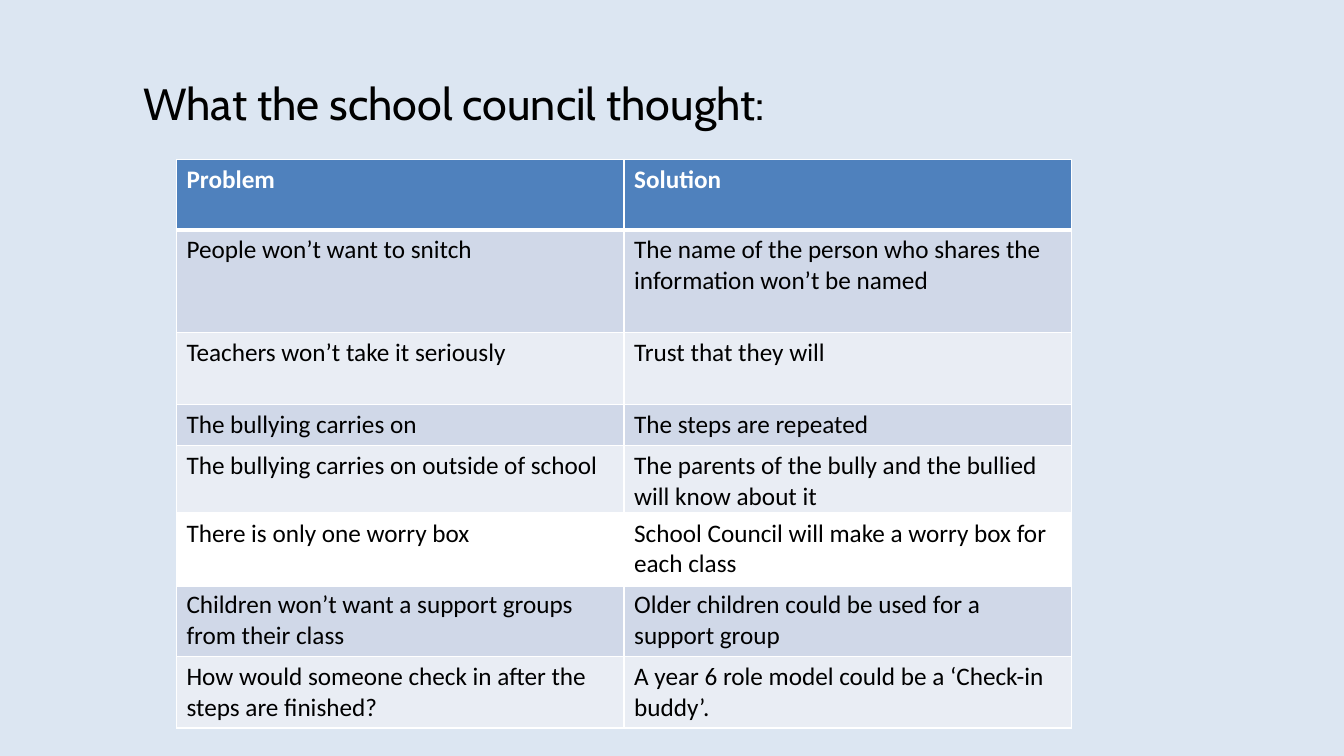
from dataclasses import dataclass

from lxml import etree
from pptx import Presentation
from pptx.dml.color import RGBColor
from pptx.enum.text import MSO_ANCHOR, MSO_AUTO_SIZE, PP_ALIGN
from pptx.oxml.ns import qn
from pptx.util import Inches, Pt

LEFT, TOP, NO_FIT = PP_ALIGN.LEFT, MSO_ANCHOR.TOP, MSO_AUTO_SIZE.NONE
TITLE_ONLY = 5


@dataclass(frozen=True)
class Theme:
    background: str = "DCE6F2"
    header: str = "4F81BD"
    bands: tuple = ("D0D8E8", "E9EDF4")
    light: str = "FFFFFF"
    dark: str = "000000"
    title_font: str = "Cabin"
    table_font: str = "Calibri"
    title_size: int = 32
    table_size: int = 18
    rule: int = 1
    heavy_rule: int = 3


THEME = Theme()

# Slide and table grid, in inches
WIDTH, HEIGHT = 13.33, 7.5
TABLE_LEFT, COLUMN = 1.75, 4.44
PROBLEMS_TOP, IDEAS_TOP = 1.58, 5.09

PROBLEMS = [
    (0.7, "Problem", "Solution"),
    (1.02, "People won’t want to snitch",
     "The name of the person who shares the information won’t be named"),
    (0.71, "Teachers won’t take it seriously", "Trust that they will"),
    (0.41, "The bullying carries on", "The steps are repeated"),
    (0.67, "The bullying carries on outside of school",
     "The parents of the bully and the bullied will know about it"),
]
IDEAS = [
    (0.71, "There is only one worry box",
     "School Council will make a worry box for each class"),
    (0.7, "Children won’t want a support groups from their class",
     "Older children could be used for a support group"),
    (0.7, "How would someone check in after the steps are finished?",
     "A year 6 role model could be a ‘Check-in buddy’."),
]


def write(frame, text, *, font, size, color=THEME.dark, bold=False):
    paragraph = frame.paragraphs[0]
    paragraph.alignment = LEFT
    run = paragraph.add_run()
    run.text = text
    run.font.name, run.font.size, run.font.bold = font, Pt(size), bold
    run.font.color.rgb = RGBColor.from_string(color)


def add_title(slide, text):
    title = slide.shapes.title
    title.left, title.top = Inches(1.42), Inches(0.1 * HEIGHT)
    title.width, title.height = Inches(10.68), Inches(0.54)
    frame = title.text_frame
    frame.margin_left = frame.margin_right = 0
    frame.margin_top = frame.margin_bottom = 0
    frame.vertical_anchor, frame.auto_size, frame.word_wrap = TOP, NO_FIT, True
    write(frame, text, font=THEME.title_font, size=THEME.title_size)


def set_borders(cell, **widths):
    properties = cell._tc.get_or_add_tcPr()
    for side in "LRTB":
        width = widths.get(side, THEME.rule)
        line = etree.SubElement(properties, qn(f"a:ln{side}"), w=str(Pt(width)))
        fill = etree.SubElement(line, qn("a:solidFill"))
        etree.SubElement(fill, qn("a:srgbClr"), val=THEME.light)


def add_banded_table(slide, rows, top, *, first_fill, first_color, first_bold):
    height = sum(row[0] for row in rows)
    table = slide.shapes.add_table(
        len(rows), 2, Inches(TABLE_LEFT), Inches(top),
        Inches(2 * COLUMN), Inches(height)).table
    for r, (row_height, *texts) in enumerate(rows):
        table.rows[r].height = Inches(row_height)
        first = r == 0
        fill = first_fill if first else THEME.bands[(r - 1) % 2]
        for c, text in enumerate(texts):
            cell = table.cell(r, c)
            # The heavy rule under the first row is shared with the row below
            set_borders(cell,
                        T=THEME.heavy_rule if r == 1 else THEME.rule,
                        B=THEME.heavy_rule if first else THEME.rule)
            cell.fill.solid()
            cell.fill.fore_color.rgb = RGBColor.from_string(fill)
            write(cell.text_frame, text, font=THEME.table_font,
                  size=THEME.table_size, bold=first and first_bold,
                  color=first_color if first else THEME.dark)


def main():
    deck = Presentation()
    deck.slide_width, deck.slide_height = Inches(WIDTH), Inches(HEIGHT)
    slide = deck.slides.add_slide(deck.slide_layouts[TITLE_ONLY])
    slide.background.fill.solid()
    slide.background.fill.fore_color.rgb = RGBColor.from_string(THEME.background)

    add_title(slide, "What the school council thought:")
    # Problems raised, under a coloured header
    add_banded_table(slide, PROBLEMS, PROBLEMS_TOP, first_fill=THEME.header,
                     first_color=THEME.light, first_bold=True)
    # Further ideas, starting with a white row
    add_banded_table(slide, IDEAS, IDEAS_TOP, first_fill=THEME.light,
                     first_color=THEME.dark, first_bold=False)
    deck.save("out.pptx")


if __name__ == "__main__":
    main()
